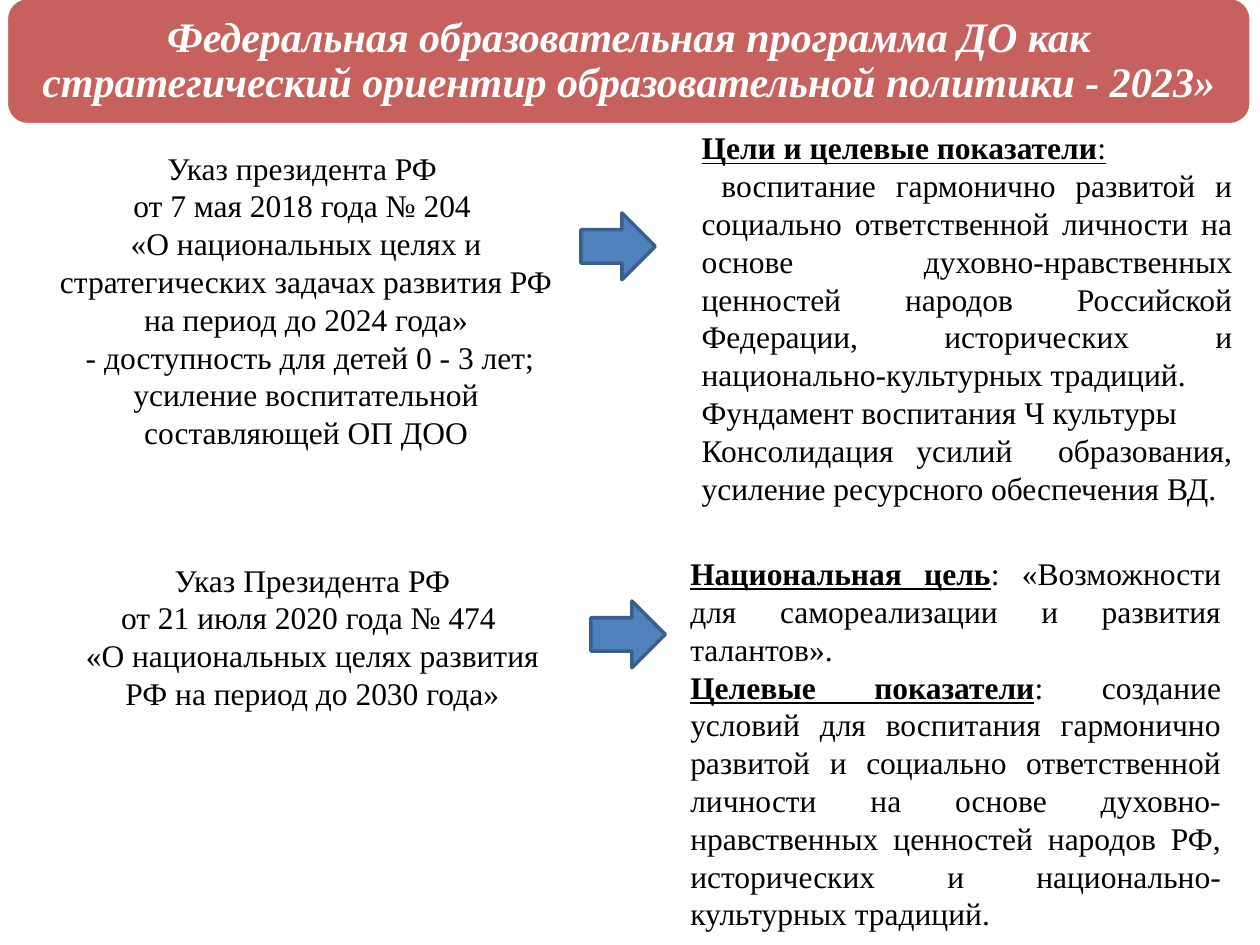
from dataclasses import dataclass

from lxml.etree import SubElement
from pptx import Presentation
from pptx.dml.color import RGBColor
from pptx.enum.shapes import MSO_SHAPE
from pptx.enum.text import MSO_ANCHOR, MSO_AUTO_SIZE, PP_ALIGN
from pptx.oxml.ns import qn
from pptx.util import Inches, Pt

WHITE = RGBColor(0xFF, 0xFF, 0xFF)
BLACK = RGBColor(0x00, 0x00, 0x00)
RED = RGBColor(0xC0, 0x50, 0x4D)
BLUE = RGBColor(0x4F, 0x81, 0xBD)
DARK_BLUE = RGBColor(0x3A, 0x5F, 0x8C)
FONT = "Times New Roman"
BANNER_BOX = (0.05, -0.02, 9.88, 1.01)


@dataclass
class Line:
    """A paragraph with an optional bold, underlined heading in front."""
    text: str
    align: PP_ALIGN = PP_ALIGN.JUSTIFY
    heading: str = ""
    underline: bool = False


@dataclass
class TextBlock:
    box: tuple[float, float, float, float]
    lines: list[Line]


@dataclass
class Decree:
    """A decree, the arrow after it and the goals it leads to."""
    decree: TextBlock
    arrow_at: tuple[float, float]
    goals: TextBlock


def centred(*texts: str) -> list[Line]:
    return [Line(text, PP_ALIGN.CENTER) for text in texts]


DECREES = [
    Decree(
        TextBlock((0.33, 1.13, 4.2, 2.52), centred(
            "Указ президента РФ ",
            "от 7 мая 2018 года № 204 ",
            "«О национальных целях и стратегических задачах развития РФ "
            "на период до 2024 года»",
            " - доступность для детей 0 - 3 лет; усиление воспитательной "
            "составляющей ОП ДОО")),
        (4.64, 1.66),
        TextBlock((5.47, 0.97, 4.41, 3.13), [
            Line(":", PP_ALIGN.LEFT, "Цели и целевые показатели", True),
            Line(" воспитание гармонично развитой и социально ответственной "
                 "личности на основе духовно-нравственных ценностей народов "
                 "Российской Федерации, исторических и "
                 "национально-культурных традиций. "),
            Line("Фундамент воспитания Ч культуры"),
            Line("Консолидация усилий  образования, усиление ресурсного "
                 "обеспечения ВД."),
        ]),
    ),
    Decree(
        TextBlock((0.51, 4.4, 3.94, 1.62), centred(
            "Указ Президента РФ",
            "от 21 июля 2020 года № 474 ",
            "«О национальных целях развития РФ на период до 2030 года»")),
        (4.72, 4.74),
        TextBlock((5.38, 4.35, 4.41, 3.13), [
            Line(": «Возможности для самореализации и развития талантов».",
                 heading="Национальная цель"),
            Line(": создание условий для воспитания гармонично развитой и "
                 "социально ответственной личности на основе "
                 "духовно-нравственных ценностей народов РФ, исторических и "
                 "национально-культурных традиций.",
                 heading="Целевые показатели"),
        ]),
    ),
]


def style_shape(shape, fill: RGBColor, outline: RGBColor) -> None:
    shape.shadow.inherit = False
    shape.fill.solid()
    shape.fill.fore_color.rgb = fill
    shape.line.color.rgb = outline
    shape.line.width = Pt(2)


def style_font(font, size: int, color: RGBColor) -> None:
    font.name = FONT
    font.size = Pt(size)
    font.color.rgb = color


def draw_banner(slide) -> None:
    left, top, width, height = map(Inches, BANNER_BOX)
    banner = slide.shapes.add_shape(
        MSO_SHAPE.ROUNDED_RECTANGLE, left, top, width, height)
    style_shape(banner, RED, WHITE)
    # Banner fill is 90 % opaque
    color = banner._element.spPr.find(qn("a:solidFill"))[0]
    SubElement(color, qn("a:alpha"), val="90000")

    title = slide.shapes.title
    title.left, title.top, title.width, title.height = left, top, width, height
    frame = title.text_frame
    frame.text = ("Федеральная образовательная программа ДО как стратегический "
                  "ориентир образовательной политики - 2023»")
    frame.word_wrap = True
    frame.auto_size = MSO_AUTO_SIZE.NONE
    frame.vertical_anchor = MSO_ANCHOR.MIDDLE
    frame.margin_left = frame.margin_right = Inches(0.1)
    frame.margin_top = frame.margin_bottom = Inches(0.1)
    heading = frame.paragraphs[0]
    heading.alignment = PP_ALIGN.CENTER
    heading.line_spacing = 0.9
    style_font(heading.font, 24, WHITE)
    heading.font.bold = heading.font.italic = True
    # Bring the title in front of the banner
    banner._element.addnext(title._element)


def draw_text(slide, block: TextBlock) -> None:
    frame = slide.shapes.add_textbox(*map(Inches, block.box)).text_frame
    frame.word_wrap = True
    frame.auto_size = MSO_AUTO_SIZE.SHAPE_TO_FIT_TEXT
    for index, line in enumerate(block.lines):
        paragraph = frame.add_paragraph() if index else frame.paragraphs[0]
        paragraph.alignment = line.align
        style_font(paragraph.font, 18, BLACK)
        if line.heading:
            heading = paragraph.add_run()
            heading.text = line.heading
            heading.font.bold = heading.font.underline = True
        body = paragraph.add_run()
        body.text = line.text
        if line.underline:
            body.font.underline = True


def draw_arrow(slide, at: tuple[float, float]) -> None:
    arrow = slide.shapes.add_shape(
        MSO_SHAPE.DOWN_ARROW, *map(Inches, (*at, 0.53, 0.59)))
    arrow.rotation = 270
    style_shape(arrow, BLUE, DARK_BLUE)


def main() -> None:
    presentation = Presentation()
    presentation.slide_width = Inches(10)
    presentation.slide_height = Inches(7.5)
    slide = presentation.slides.add_slide(presentation.slide_layouts[5])

    draw_banner(slide)
    for row in DECREES:
        draw_arrow(slide, row.arrow_at)
        draw_text(slide, row.decree)
        draw_text(slide, row.goals)

    presentation.save("out.pptx")


if __name__ == "__main__":
    main()
